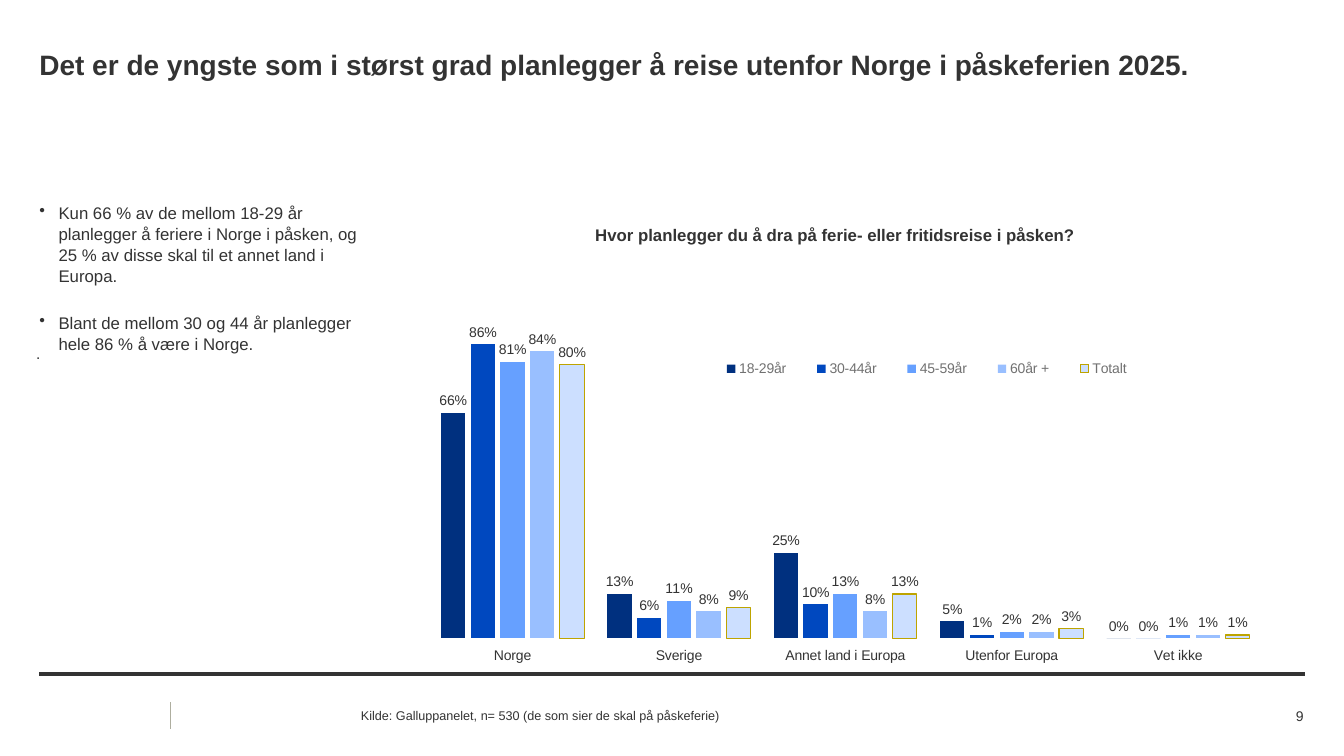
from dataclasses import dataclass, field
from typing import Any

from lxml import etree
from pptx import Presentation
from pptx import util as u
from pptx.chart import data as chart_data
from pptx.dml import color
from pptx.enum import chart as chart_enum
from pptx.enum import shapes, text
from pptx.oxml import ns

FONT = "Arial"
INK = "333333"


@dataclass
class Note:
    at: tuple[float, float, float, float]
    lines: list[str]
    size: float
    anchor: Any = text.MSO_ANCHOR.MIDDLE
    align: Any = text.PP_ALIGN.LEFT
    bulleted: bool = False


@dataclass
class Rule:
    start: tuple[float, float]
    end: tuple[float, float]
    shade: str
    weight: float


@dataclass
class AgeGroup:
    name: str
    values: list[float]
    fill: str
    outline: str = field(default="")


DESTINATIONS = ["Norge", "Sverige", "Annet land i Europa", "Utenfor Europa", "Vet ikke"]
AGE_GROUPS = [
    AgeGroup("18-29år", [0.66, 0.13, 0.25, 0.05, 0], "00307F"),
    AgeGroup("30-44år", [0.86, 0.06, 0.10, 0.01, 0], "0048BF"),
    AgeGroup("45-59år", [0.81, 0.11, 0.13, 0.02, 0.01], "66A0FF"),
    AgeGroup("60år +", [0.84, 0.08, 0.08, 0.02, 0.01], "99BFFF"),
    AgeGroup("Totalt", [0.80, 0.09, 0.13, 0.03, 0.01], "CCDFFF", "BEA400"),
]
RULES = [
    Rule((0.39, 6.69), (12.94, 6.69), INK, 3),
    Rule((1.69, 7.23), (1.69, 6.96), "AEAE9F", 0.5),
]
NOTES = [
    Note((0.36, 1.74, 4.17, 3.54), ["."], 11),
    Note(
        (0.39, 2, 3.32, 3.54),
        [
            "Kun 66 % av de mellom 18-29 år planlegger å feriere i Norge i påsken, "
            "og 25 % av disse skal til et annet land i Europa.",
            "Blant de mellom 30 og 44 år planlegger hele 86 % å være i Norge.",
        ],
        12,
        anchor=text.MSO_ANCHOR.TOP,
        bulleted=True,
    ),
    Note(
        (3.58, 6.99, 7.72, 0.22),
        ["Kilde: Galluppanelet, n= 530 (de som sier de skal på påskeferie)"],
        9,
    ),
    Note((11.87, 6.99, 1.06, 0.22), ["9"], 10, align=text.PP_ALIGN.RIGHT),
]


def rgb(value: str) -> color.RGBColor:
    return color.RGBColor.from_string(value)


def assign(target: Any, values: dict[str, Any]) -> None:
    for name, value in values.items():
        setattr(target, name, value)


def style_font(font: Any, size: float, shade: str = INK, bold: bool = False) -> None:
    assign(font, {"name": FONT, "size": u.Pt(size), "bold": bold})
    font.color.rgb = rgb(shade)


def prepare_frame(frame: Any, anchor: Any) -> None:
    margins = {f"margin_{side}": 0 for side in ("left", "top", "right", "bottom")}
    assign(frame, {"word_wrap": True, "auto_size": text.MSO_AUTO_SIZE.NONE,
                   "vertical_anchor": anchor, **margins})


def add_bullet(para: Any) -> None:
    properties = para._p.get_or_add_pPr()
    indent = u.Inches(0.19)
    properties.set("marL", str(indent))
    properties.set("indent", str(-indent))
    etree.SubElement(properties, ns.qn("a:buChar"), char="•")


def add_note(page: Any, note: Note) -> None:
    box = page.shapes.add_textbox(*map(u.Inches, note.at))
    frame = box.text_frame
    prepare_frame(frame, note.anchor)
    for index, line in enumerate(note.lines):
        para = frame.add_paragraph() if index else frame.paragraphs[0]
        para.alignment = note.align
        if note.bulleted:
            para.line_spacing = 1.05
        if index:
            para.space_before = u.Pt(18)
        if note.bulleted:
            add_bullet(para)
        span = para.add_run()
        span.text = line
        style_font(span.font, note.size)


def add_rule(page: Any, rule: Rule) -> None:
    line = page.shapes.add_connector(
        shapes.MSO_CONNECTOR.STRAIGHT, *map(u.Inches, rule.start + rule.end)
    )
    line.line.color.rgb = rgb(rule.shade)
    line.line.width = u.Pt(rule.weight)
    etree.SubElement(line._element.spPr, ns.qn("a:effectLst"))


def place_part(part: Any, after: str, values: dict[str, float], inner: bool = False) -> None:
    for old in part.findall(ns.qn("c:layout")):
        part.remove(old)
    layout = etree.Element(ns.qn("c:layout"))
    manual = etree.SubElement(layout, ns.qn("c:manualLayout"))
    settings: dict[str, Any] = {"layoutTarget": "inner"} if inner else {}
    settings |= {"xMode": "edge", "yMode": "edge", **values}
    for name, value in settings.items():
        etree.SubElement(manual, ns.qn(f"c:{name}"), val=str(value))
    position = part.index(part.find(ns.qn(after))) + 1 if after else 0
    part.insert(position, layout)


def add_travel_chart(page: Any) -> None:
    data = chart_data.CategoryChartData(number_format="0%")
    data.categories = DESTINATIONS
    for group in AGE_GROUPS:
        data.add_series(group.name, group.values)
    chart = page.shapes.add_chart(
        chart_enum.XL_CHART_TYPE.COLUMN_CLUSTERED,
        *map(u.Inches, (3.9, 1.3, 8.97, 5.3)), data
    ).chart
    style_font(chart.font, 10)

    chart.has_title = True
    heading = chart.chart_title.text_frame.paragraphs[0].add_run()
    heading.text = "Hvor planlegger du å dra på ferie- eller fritidsreise i påsken?"
    style_font(heading.font, 12, bold=True)

    chart.has_legend = True
    assign(chart.legend, {"position": chart_enum.XL_LEGEND_POSITION.BOTTOM,
                          "include_in_layout": False})
    style_font(chart.legend.font, 10, "717171")

    assign(chart.value_axis, {"minimum_scale": 0, "maximum_scale": 1,
                              "has_major_gridlines": False, "visible": False})
    chart.value_axis.tick_labels.number_format = "0%"
    chart.value_axis.tick_labels.number_format_is_linked = False
    chart.category_axis.format.line.fill.background()
    style_font(chart.category_axis.tick_labels.font, 10)

    plot = chart.plots[0]
    assign(plot, {"gap_width": 95, "overlap": -22, "vary_by_categories": False})
    for series, group in zip(plot.series, AGE_GROUPS):
        series.format.fill.solid()
        series.format.fill.fore_color.rgb = rgb(group.fill)
        if group.outline:
            series.format.line.color.rgb = rgb(group.outline)
            series.format.line.width = u.Pt(0.75)
        labels = series.data_labels
        assign(labels, {"show_value": True, "number_format": "0%",
                        "number_format_is_linked": False,
                        "position": chart_enum.XL_LABEL_POSITION.OUTSIDE_END})
        style_font(labels.font, 10)

    root = chart.element.find(ns.qn("c:chart"))
    place_part(root.find(ns.qn("c:title")), "c:tx", {"x": 0.22, "y": 0.17})
    place_part(root.find(ns.qn("c:legend")), "c:legendPos",
               {"x": 0.34, "y": 0.42, "w": 0.5, "h": 0.05})
    place_part(root.find(ns.qn("c:plotArea")), "",
               {"x": 0.04, "y": 0.31, "w": 0.92, "h": 0.64}, inner=True)


def add_title(page: Any) -> None:
    title = page.shapes.title
    left, top, width, height = map(u.Inches, (0.39, 0.47, 12.54, 0.44))
    assign(title, {"left": left, "top": top, "width": width, "height": height})
    prepare_frame(title.text_frame, text.MSO_ANCHOR.TOP)
    para = title.text_frame.paragraphs[0]
    para.alignment = text.PP_ALIGN.LEFT
    span = para.add_run()
    span.text = ("Det er de yngste som i størst grad planlegger å reise "
                 "utenfor Norge i påskeferien 2025.")
    style_font(span.font, 20, bold=True)


def main() -> None:
    deck = Presentation()
    assign(deck, {"slide_width": u.Inches(13.33), "slide_height": u.Inches(7.5)})
    page = deck.slides.add_slide(deck.slide_layouts[5])
    add_title(page)
    add_travel_chart(page)
    for rule in RULES:
        add_rule(page, rule)
    for note in NOTES:
        add_note(page, note)
    deck.save("out.pptx")


if __name__ == "__main__":
    main()
